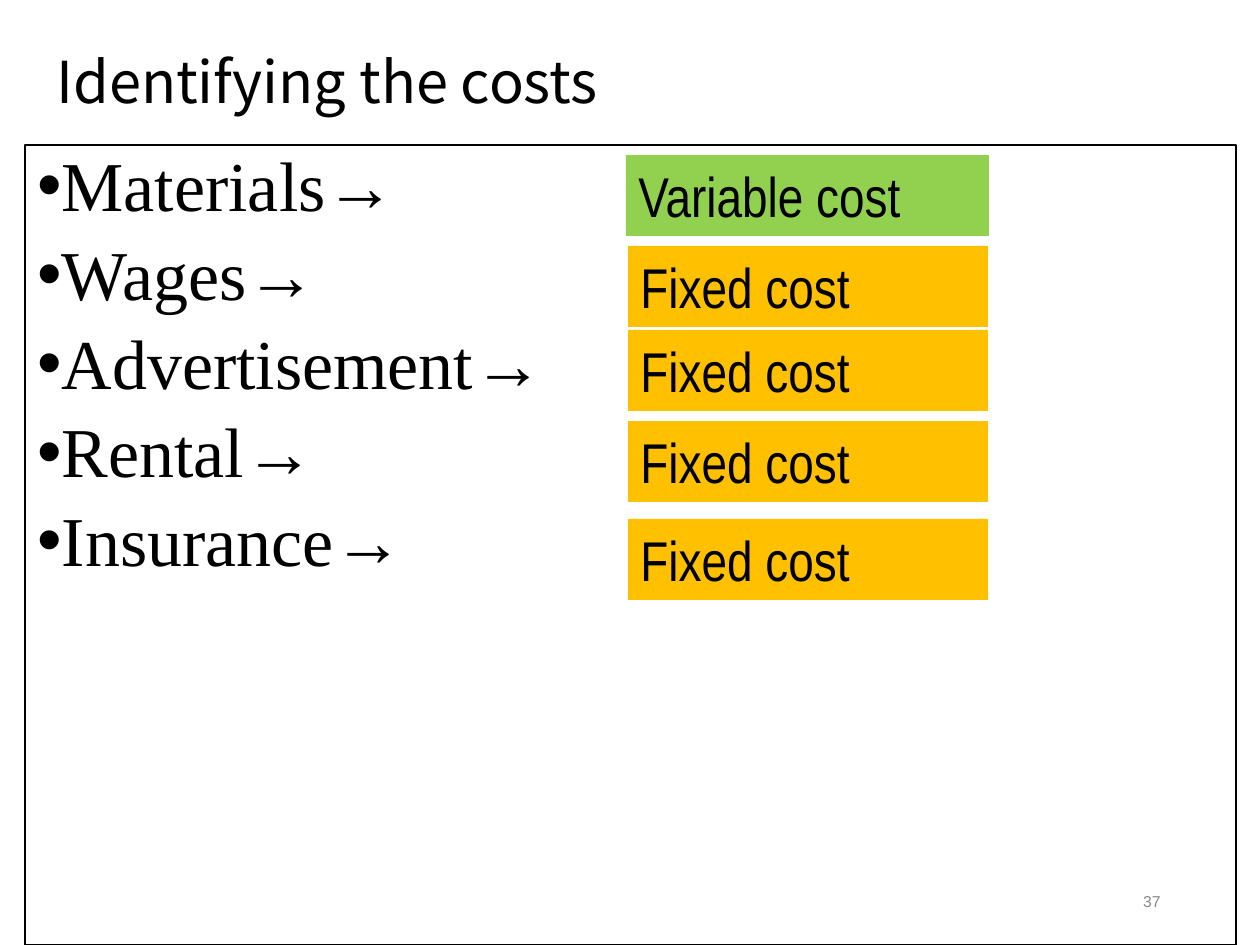
from lxml import etree
from pptx import Presentation
from pptx import util as u
from pptx.dml.color import RGBColor
from pptx.enum import shapes, text
from pptx.oxml.ns import qn

HUES = {"ink": "000000", "green": "92D050", "amber": "FFC000", "gray": "898989"}
COSTS = ["Materials→", "Wages→", "Advertisement→", "Rental→", "Insurance→"]
TAGS = [
    ("Variable cost", "green", 601, 10, 363),
    ("Fixed cost", "amber", 603, 101, 360),
    ("Fixed cost", "amber", 603, 185, 360),
    ("Fixed cost", "amber", 603, 276, 360),
    ("Fixed cost", "amber", 603, 374, 360),
]


def px(n):
    return u.Emu(round(n * 914400 / 126))


def hue(name):
    return RGBColor.from_string(HUES[name])


def style(para, face, size, color="ink"):
    font = para.font
    font.name, font.size = face, u.Pt(size)
    font.color.rgb = hue(color)


def label(slide, box, words, face, size, color="ink"):
    shape = slide.shapes.add_textbox(*map(px, box))
    frame = shape.text_frame
    frame.word_wrap = True
    frame.vertical_anchor = text.MSO_ANCHOR.MIDDLE
    para = frame.paragraphs[0]
    para.text = words
    style(para, face, size, color)
    return para


def panel(slide, box):
    shape = slide.shapes.add_shape(shapes.MSO_SHAPE.RECTANGLE, *map(px, box))
    shape.shadow.inherit = False
    shape.fill.background()
    shape.line.color.rgb = hue("ink")
    shape.line.width = u.Pt(0.75)
    frame = shape.text_frame
    frame.word_wrap = True
    frame.vertical_anchor = text.MSO_ANCHOR.TOP
    for i, cost in enumerate(COSTS):
        para = frame.add_paragraph() if i else frame.paragraphs[0]
        para.text = cost
        para.alignment = text.PP_ALIGN.LEFT
        para.line_spacing = 0.9
        para.space_before = u.Pt(7.5)
        props = para._p.get_or_add_pPr()
        props.set("marL", str(px(24)))
        props.set("indent", str(px(-24)))
        etree.SubElement(props, qn("a:buFont")).set("typeface", "Arial")
        etree.SubElement(props, qn("a:buChar")).set("char", "•")
        style(para, "Times New Roman", 40)


def tags(slide, box):
    left, top = box[:2]
    for words, color, x, y, wide in TAGS:
        shape = slide.shapes.add_shape(
            shapes.MSO_SHAPE.RECTANGLE, *map(px, (left + x, top + y, wide, 81)))
        shape.shadow.inherit = False
        shape.fill.solid()
        shape.fill.fore_color.rgb = hue(color)
        shape.line.fill.background()
        frame = shape.text_frame
        frame.word_wrap = True
        frame.vertical_anchor = text.MSO_ANCHOR.TOP
        para = frame.paragraphs[0]
        para.text = words
        para.alignment = text.PP_ALIGN.LEFT
        style(para, "Arial Narrow", 32)


def main():
    deck = Presentation()
    deck.slide_width, deck.slide_height = px(1260), px(945)
    slide = deck.slides.add_slide(deck.slide_layouts[6])
    body = (25, 145, 1211, 800)
    title = label(slide, (44, 26, 1134, 118), "Identifying the costs",
                  "Noto Sans CJK JP", 33)
    title.line_spacing = 0.9
    panel(slide, body)
    tags(slide, body)
    page = label(slide, (890, 876, 283, 50), "37", "Arial", 9, "gray")
    page.alignment = text.PP_ALIGN.RIGHT
    deck.save("out.pptx")


if __name__ == "__main__":
    main()
